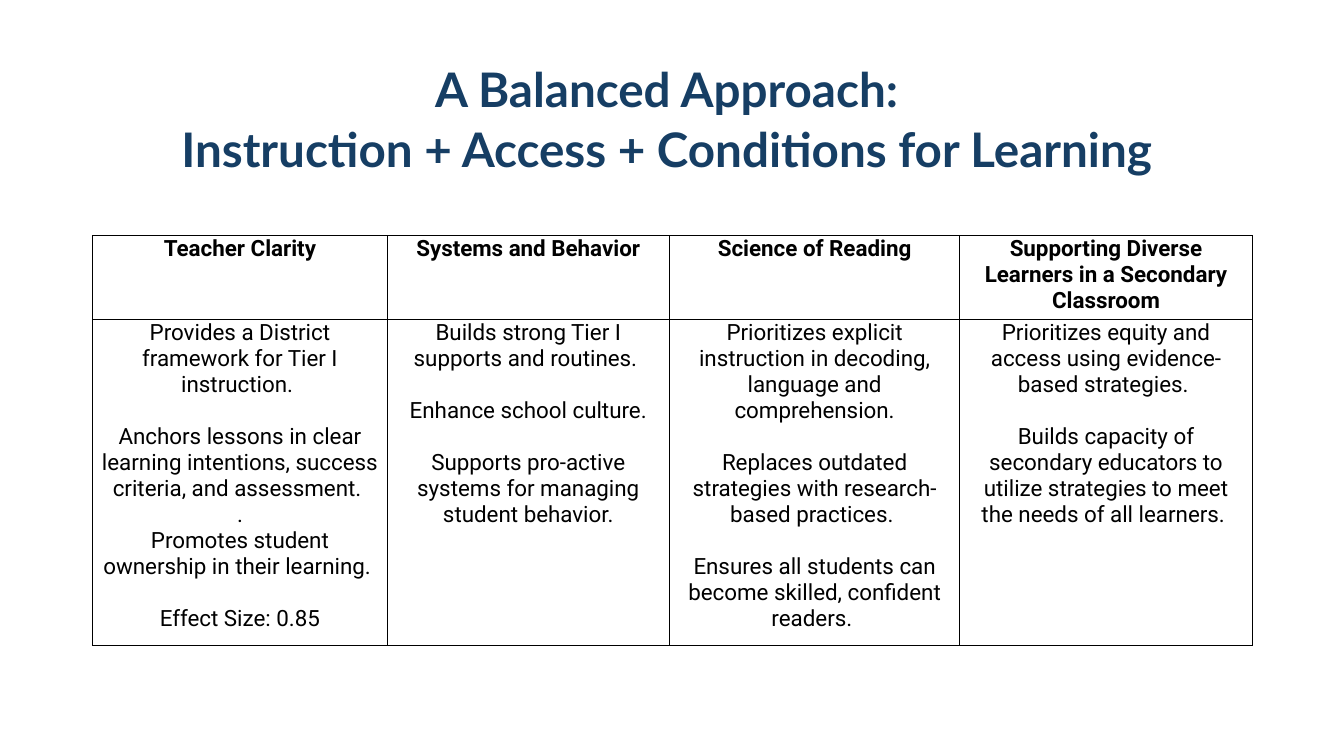
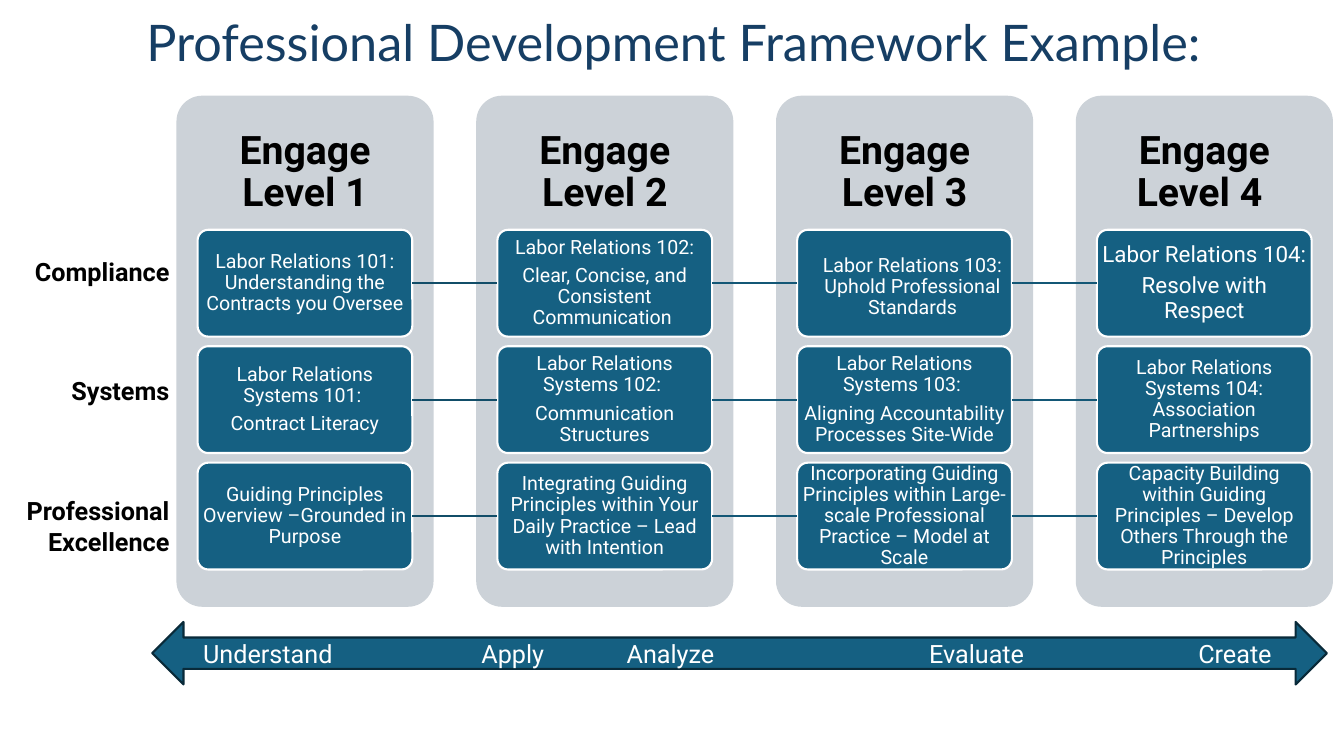
from dataclasses import dataclass, replace
from itertools import pairwise

from lxml import etree
from pptx import Presentation
from pptx.dml.color import RGBColor
from pptx.enum import shapes, text
from pptx.oxml.ns import qn
from pptx.util import Inches, Pt

NAVY, TEAL, GREY = "163E64", "156082", "CCD2D8"
BLACK, WHITE, EDGE = "000000", "FFFFFF", "092A39"
MID, TOP = text.MSO_ANCHOR.MIDDLE, text.MSO_ANCHOR.TOP


@dataclass(frozen=True)
class Style:
    size: float
    color: str = BLACK
    font: str = "Roboto"
    bold: bool = False
    align: text.PP_ALIGN = text.PP_ALIGN.CENTER
    lead: float = 1.0
    after: float = 0


@dataclass(frozen=True)
class Box:
    x: float
    y: float
    w: float
    h: float

    def emu(self) -> tuple:
        return tuple(Inches(v) for v in (self.x, self.y, self.w, self.h))


@dataclass(frozen=True)
class Topic:
    head: str
    points: tuple[str, ...]  # a line break starts a paragraph with no gap
    width: float


@dataclass(frozen=True)
class Card:
    lines: tuple[str, ...]
    size: float = 14
    pad: tuple = (0.01, 0.01, 0.01, 0.01)


@dataclass(frozen=True)
class Step:
    word: str
    tab: float


TITLE = Style(36, NAVY, "Lato", lead=0.9)
BODY = Style(16)
HEAD = replace(BODY, bold=True)
PANEL = Style(28, bold=True, lead=0.9)
CARD = Style(14, WHITE, lead=0.9, after=5)
LABEL = Style(18, bold=True, align=text.PP_ALIGN.RIGHT)
STEP = Style(18, WHITE, align=text.PP_ALIGN.LEFT)

TOPICS = (
    Topic("Teacher Clarity", (
        "Provides a District framework for Tier I instruction. ",
        "Anchors lessons in clear learning intentions, success criteria, "
        "and assessment. \n.\nPromotes student ownership in their learning. ",
        "Effect Size: 0.85"), 2.92),
    Topic("Systems and Behavior", (
        "Builds strong Tier I supports and routines. ",
        "Enhance school culture.",
        "Supports pro-active systems for managing student behavior."), 2.8),
    Topic("Science of Reading", (
        "Prioritizes explicit instruction in decoding, language and comprehension.",
        "Replaces outdated strategies with research- based practices. ",
        "Ensures all students can become skilled, confident readers. "), 2.88),
    Topic("Supporting Diverse Learners in a Secondary Classroom", (
        "Prioritizes equity and access using evidence-based strategies. ",
        "Builds capacity of secondary educators to utilize strategies "
        "to meet the needs of all learners. "), 2.9),
)
LEVELS = ("Engage Level 1", "Engage Level 2", "Engage Level 3", "Engage Level 4 ")
AREAS = ("Compliance", "Systems", "Professional Excellence")
CARDS = (
    (Card(("Labor Relations 101: Understanding the Contracts you Oversee",)),
     Card(("Labor Relations 102:", "Clear, Concise, and Consistent Communication ")),
     Card(("Labor Relations 103: Uphold Professional Standards",),
          pad=(0.16, 0.09, 0, 0.01)),
     Card(("Labor Relations 104: ", "Resolve with Respect"), 16)),
    (Card(("Labor Relations Systems 101: ", "Contract Literacy")),
     Card(("Labor Relations Systems 102: ", "Communication Structures")),
     Card(("Labor Relations Systems 103: ",
           "Aligning Accountability Processes Site-Wide")),
     Card(("Labor Relations Systems 104: Association Partnerships",))),
    (Card(("Guiding Principles Overview –Grounded in Purpose",)),
     Card(("Integrating Guiding Principles within Your Daily Practice "
           "– Lead with Intention",)),
     Card(("Incorporating Guiding Principles within Large-scale Professional "
           "Practice – Model at Scale",)),
     Card(("Capacity Building within Guiding Principles – Develop Others "
           "Through the Principles",))),
)
STEPS = (Step("Understand", 0), Step("Apply", 2.76), Step("Analyze", 4.2),
         Step("Evaluate", 7.2), Step("Create", 9.87))


def rgb(code: str) -> RGBColor:
    return RGBColor.from_string(code)


def add_run(para, words: str, style: Style) -> None:
    run = para.add_run()
    run.text = words
    font = run.font
    font.name, font.size, font.bold = style.font, Pt(style.size), style.bold
    font.color.rgb = rgb(style.color)


def write(frame, groups, style: Style, gap: float = 0) -> None:
    """Write groups of paragraphs, with a gap before each later group."""
    para = None
    for group in groups:
        for i, line in enumerate(group.split("\n")):
            first = para is None
            para = frame.paragraphs[0] if first else frame.add_paragraph()
            para.alignment, para.line_spacing = style.align, style.lead
            para.space_before = Pt(0 if first or i else gap)
            para.space_after = Pt(style.after)
            add_run(para, line, style)


def set_frame(frame, pad=(0.1, 0.05, 0.1, 0.05), anchor=MID) -> None:
    frame.word_wrap, frame.auto_size = True, text.MSO_AUTO_SIZE.NONE
    frame.vertical_anchor = anchor
    (frame.margin_left, frame.margin_top,
     frame.margin_right, frame.margin_bottom) = map(Inches, pad)


def add_slide(deck, box: Box, lines, style: Style):
    slide = deck.slides.add_slide(deck.slide_layouts[5])
    title = slide.shapes.title
    title.left, title.top, title.width, title.height = box.emu()
    set_frame(title.text_frame)
    write(title.text_frame, lines, style)
    return slide


def add_shape(slide, kind, box: Box, fill: str, line: str | None = None):
    shape = slide.shapes.add_shape(kind, *box.emu())
    shape.shadow.inherit = False
    shape.fill.solid()
    shape.fill.fore_color.rgb = rgb(fill)
    if line:
        shape.line.color.rgb, shape.line.width = rgb(line), Pt(1.5)
    else:
        shape.line.fill.background()
    return shape


def add_round(slide, box: Box, fill: str, line: str | None = None):
    shape = add_shape(slide, shapes.MSO_SHAPE.ROUNDED_RECTANGLE, box, fill, line)
    shape.adjustments[0] = 0.1
    return shape


def join(slide, left, right, color: str) -> None:
    link = slide.shapes.add_connector(shapes.MSO_CONNECTOR.STRAIGHT, 0, 0, 0, 0)
    link.begin_connect(left, 3)
    link.end_connect(right, 1)
    link.line.color.rgb, link.line.width = rgb(color), Pt(1.5)
    etree.SubElement(link._element.spPr, qn("a:effectLst"))


def add_edges(cell) -> None:
    props = cell._tc.get_or_add_tcPr()
    for side in "LRTB":
        edge = etree.SubElement(props, qn(f"a:ln{side}"), w=str(Pt(1)))
        fill = etree.SubElement(edge, qn("a:solidFill"))
        etree.SubElement(fill, qn("a:srgbClr"), val=BLACK)


def set_cell(cell, groups, style: Style) -> None:
    add_edges(cell)
    cell.fill.background()
    cell.margin_left = cell.margin_right = Inches(0.07)
    cell.margin_top = cell.margin_bottom = 0
    write(cell.text_frame, groups, style, gap=18.75)


def draw_table(deck) -> None:
    slide = add_slide(deck, Box(0.92, 0.36, 11.5, 1.71),
                      ("A Balanced Approach: ",
                       "Instruction + Access + Conditions for Learning "),
                      replace(TITLE, size=34, bold=True, after=6))
    box = Box(0.92, 2.34, 11.5, 4.06)
    table = slide.shapes.add_table(2, len(TOPICS), *box.emu()).table
    table.first_row = table.horz_banding = False
    for row, high in zip(table.rows, (0.83, 3.23)):
        row.height = Inches(high)
    for col, topic in enumerate(TOPICS):
        table.columns[col].width = Inches(topic.width)
        set_cell(table.cell(0, col), (topic.head,), HEAD)
        set_cell(table.cell(1, col), topic.points, BODY)


def draw_steps(slide) -> None:
    arrow = add_shape(slide, shapes.MSO_SHAPE.LEFT_RIGHT_ARROW,
                      Box(1.51, 6.17, 11.65, 0.62), TEAL, EDGE)
    set_frame(arrow.text_frame, (0.35, 0, 0, 0))
    para = arrow.text_frame.paragraphs[0]
    para.alignment = STEP.align
    tabs = etree.SubElement(para._p.get_or_add_pPr(), qn("a:tabLst"))
    for step in STEPS:
        if step.tab:
            etree.SubElement(tabs, qn("a:tab"), pos=str(Inches(step.tab)), algn="l")
        add_run(para, ("\t" if step.tab else "") + step.word, STEP)


def draw_levels(deck) -> None:
    slide = add_slide(deck, Box(0.2, 0.05, 12.96, 0.79),
                      ("Professional Development Framework Example:",), TITLE)
    left, top = 1.75, 2.28
    across, down = (10.67 - left) / 3, (4.59 - top) / 2

    # Level panels
    for col, level in enumerate(LEVELS):
        panel = add_round(slide, Box(left + col * across, 0.95, 2.55, 5.07), GREY)
        set_frame(panel.text_frame, (0.15, 0.27, 0.15, 0.1), TOP)
        write(panel.text_frame, (level,), PANEL)

    # Course cards, joined along each row
    for row, cards in enumerate(CARDS):
        tiles = []
        for col, card in enumerate(cards):
            box = Box(left + 0.21 + col * across, top + row * down, 2.13, 1.06)
            tile = add_round(slide, box, TEAL, WHITE)
            set_frame(tile.text_frame, card.pad)
            write(tile.text_frame, card.lines, replace(CARD, size=card.size))
            tiles.append(tile)
        for col, (one, two) in enumerate(pairwise(tiles)):
            join(slide, one, two, "135776" if col else "114D68")

    # Row labels
    label = slide.shapes.add_textbox(*Box(0.11, 2.49, 1.67, 3.1).emu())
    set_frame(label.text_frame, anchor=TOP)
    write(label.text_frame, AREAS, LABEL, gap=64)
    draw_steps(slide)


def main() -> None:
    deck = Presentation()
    deck.slide_width, deck.slide_height = Inches(13.33), Inches(7.5)
    draw_table(deck)
    draw_levels(deck)
    deck.save("out.pptx")


if __name__ == "__main__":
    main()
